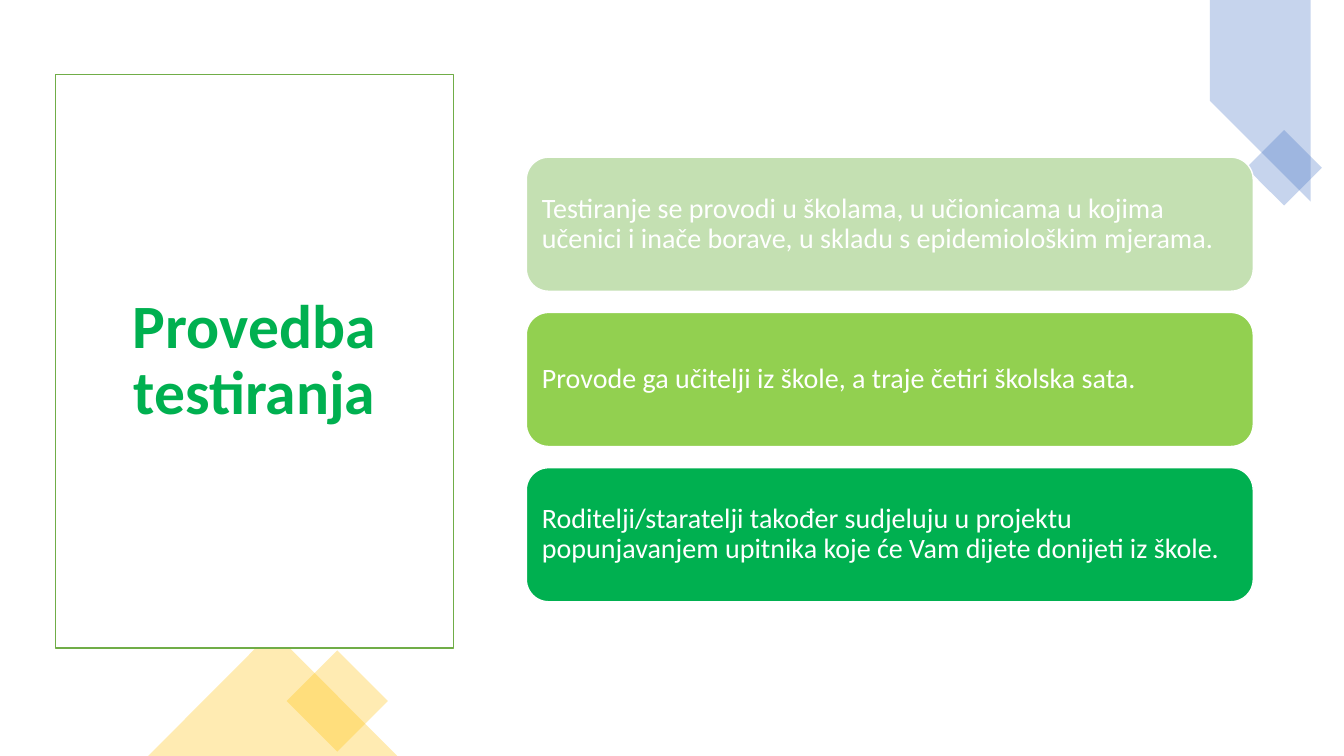
from dataclasses import dataclass

from lxml import etree
from pptx import Presentation
from pptx import util as u
from pptx.dml import color
from pptx.enum import shapes, text
from pptx.oxml import ns

BLUE, GOLD, GREEN, WHITE = "4472C4", "FFC000", "00B050", "FFFFFF"


@dataclass
class Ornament:
    kind: shapes.MSO_SHAPE
    left: float
    top: float
    width: float
    height: float
    fill: str
    rotation: float = 0


@dataclass
class Card:
    wording: str
    fill: str


ORNAMENTS = [
    Ornament(shapes.MSO_SHAPE.RECTANGLE, 12.47, 1.4, 0.53, 0.53, BLUE, 45),
    Ornament(shapes.MSO_SHAPE.RECTANGLE, 2.99, 6.6, 0.71, 0.71, GOLD, 45),
    Ornament(shapes.MSO_SHAPE.ISOSCELES_TRIANGLE, 1.47, 6.26, 2.47, 1.24, GOLD),
]
CORNER = [(13.33, 0), (12.34, 0), (11.75, 0.59), (13.2, 2.04), (13.33, 1.91)]
CARDS = [
    Card("Testiranje se provodi u školama, u učionicama u kojima učenici i inače "
         "borave, u skladu s epidemiološkim mjerama.", "C4E0B2"),
    Card("Provode ga učitelji iz škole, a traje četiri školska sata.", "92D050"),
    Card("Roditelji/staratelji također sudjeluju u projektu popunjavanjem upitnika "
         "koje će Vam dijete donijeti iz škole.", GREEN),
]
CARD_TOP, CARD_PITCH = 1.56, 1.54


def rgb(value: str) -> color.RGBColor:
    return color.RGBColor.from_string(value)


def apply(target, values: dict) -> None:
    for name, value in values.items():
        setattr(target, name, value)


def place(shape, left: float, top: float, width: float, height: float) -> None:
    apply(shape, {"left": u.Inches(left), "top": u.Inches(top),
                  "width": u.Inches(width), "height": u.Inches(height)})


def paint(shape, fill: str, line: str) -> None:
    shape.fill.solid()
    shape.fill.fore_color.rgb = rgb(fill)
    shape.line.color.rgb = rgb(line)
    shape.line.width = u.Pt(1)


def paint_faint(shape, fill: str) -> None:
    shape.shadow.inherit = False
    shape.line.fill.background()
    shape.fill.solid()
    shape.fill.fore_color.rgb = rgb(fill)
    tint = shape._element.spPr.find(ns.qn("a:solidFill"))[0]
    etree.SubElement(tint, ns.qn("a:alpha"), val="30000")


def write(shape, wording: str, align: text.PP_ALIGN, inset: float, font: dict, ink: str) -> None:
    frame = shape.text_frame
    frame.text = wording
    apply(frame, {"word_wrap": True, "auto_size": text.MSO_AUTO_SIZE.NONE,
                  "vertical_anchor": text.MSO_ANCHOR.MIDDLE,
                  "margin_left": u.Inches(inset), "margin_right": u.Inches(inset)})
    para = frame.paragraphs[0]
    apply(para, {"alignment": align, "line_spacing": 0.9})
    span = para.runs[0]
    apply(span.font, {"name": "Calibri", **font})
    span.font.color.rgb = rgb(ink)


def draw_ornament(page, ornament: Ornament) -> None:
    shape = page.shapes.add_shape(ornament.kind, 0, 0, 0, 0)
    place(shape, ornament.left, ornament.top, ornament.width, ornament.height)
    shape.rotation = ornament.rotation
    paint_faint(shape, ornament.fill)


def draw_corner(page) -> None:
    builder = page.shapes.build_freeform(*CORNER[0], scale=u.Inches(1))
    builder.add_line_segments(CORNER[1:], close=True)
    paint_faint(builder.convert_to_shape(), BLUE)


def draw_card(page, card: Card, row: int) -> None:
    box = page.shapes.add_shape(shapes.MSO_SHAPE.ROUNDED_RECTANGLE, 0, 0, 0, 0)
    place(box, 5.22, CARD_TOP + row * CARD_PITCH, 7.21, 1.33)
    box.shadow.inherit = False
    paint(box, card.fill, WHITE)
    write(box, card.wording, text.PP_ALIGN.LEFT, 0.09, {"size": u.Pt(20)}, WHITE)


def draw_title(page) -> None:
    title = page.shapes.title
    place(title, 0.55, 0.74, 3.95, 5.69)
    paint(title, WHITE, "70AD47")
    write(title, "Provedba testiranja", text.PP_ALIGN.CENTER, 0.1,
          {"size": u.Pt(44), "bold": True}, GREEN)
    page.shapes._spTree.append(title._element)


def main() -> None:
    deck = Presentation()
    apply(deck, {"slide_width": u.Inches(13.33), "slide_height": u.Inches(7.5)})
    page = deck.slides.add_slide(deck.slide_layouts.get_by_name("Title Only"))
    draw_corner(page)
    for ornament in ORNAMENTS:
        draw_ornament(page, ornament)
    draw_title(page)
    for row, card in enumerate(CARDS):
        draw_card(page, card, row)
    deck.save("out.pptx")


if __name__ == "__main__":
    main()
